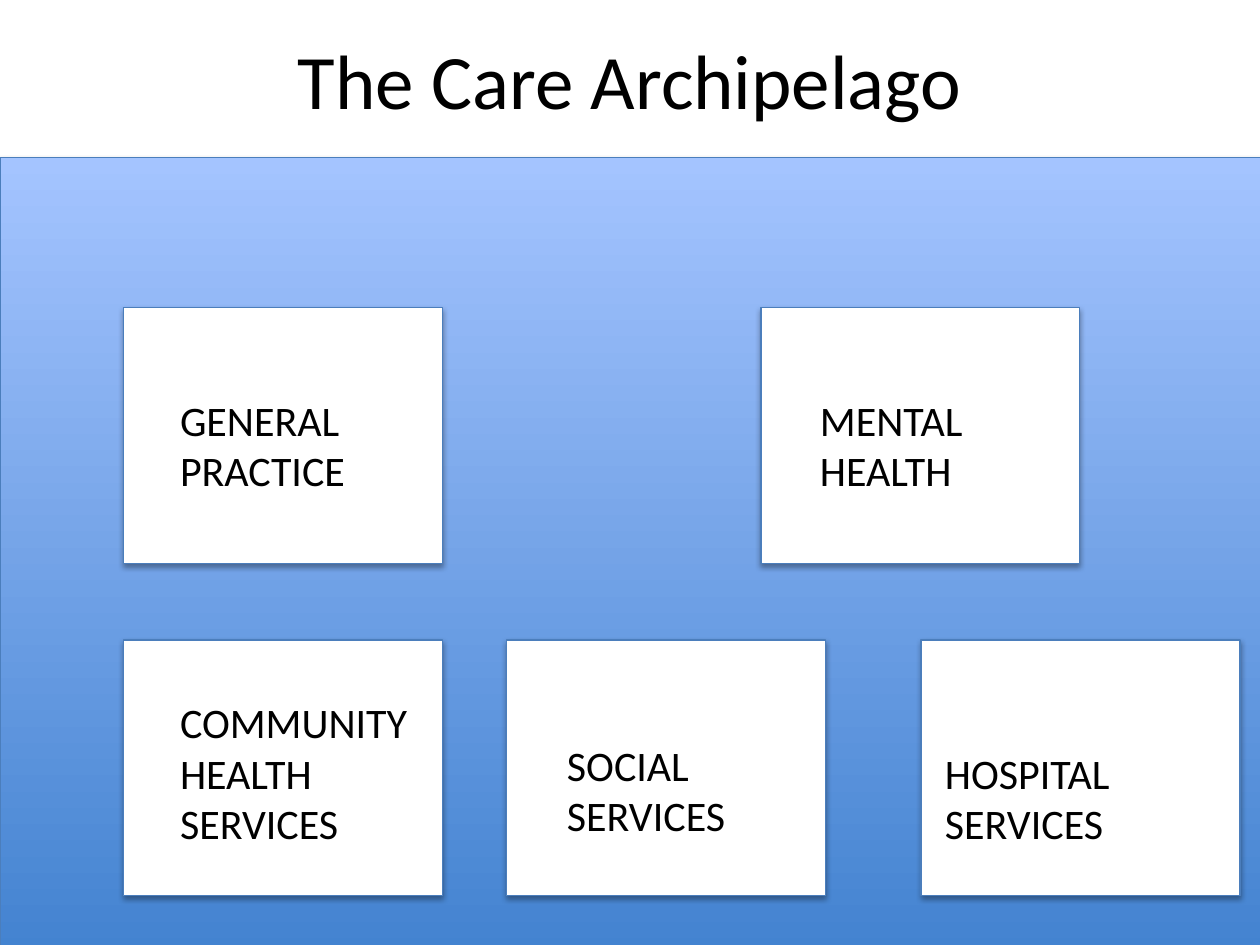
from dataclasses import dataclass

from lxml.etree import SubElement
from pptx import Presentation
from pptx.dml.color import RGBColor
from pptx.enum.shapes import MSO_SHAPE
from pptx.enum.text import MSO_ANCHOR, PP_ALIGN
from pptx.oxml.ns import qn
from pptx.shapes.autoshape import Shape
from pptx.slide import Slide
from pptx.util import Cm, Pt

HUES = {"ink": "000000", "white": "FFFFFF", "edge": "4B7EBC",
        "deep": "3F80CE", "pale": "A4C4FF"}
WIDE, HIGH = 6.43, 5.16
TOP, LOW = 6.2, 12.9


@dataclass
class Isle:
    lines: list[str]
    left: float
    top: float
    text_x: float
    text_y: float


ISLES = [
    Isle(["GENERAL", "PRACTICE"], 2.49, TOP, 3.38, 7.82),
    Isle(["MENTAL", "HEALTH"], 15.34, TOP, 16.28, 7.82),
    Isle(["COMMUNITY", "HEALTH", "SERVICES"], 2.49, LOW, 3.38, 13.92),
    Isle(["HOSPITAL", "SERVICES"], 18.57, LOW, 18.8, 14.94),
    Isle(["SOCIAL", "SERVICES"], 10.21, LOW, 11.18, 14.78),
]


def hue(name: str) -> RGBColor:
    return RGBColor.from_string(HUES[name])


def add_shade(shape: Shape) -> None:
    shape.shadow.inherit = False
    group = shape._element.spPr.find(qn("a:effectLst"))
    shade = SubElement(group, qn("a:outerShdw"), blurRad=str(Pt(3.1)),
                       dist=str(Pt(1.8)), dir="5400000", rotWithShape="0")
    tone = SubElement(shade, qn("a:srgbClr"), val=HUES["ink"])
    SubElement(tone, qn("a:alpha"), val="35000")


def add_box(slide: Slide, left: float, top: float,
            wide: float, high: float) -> Shape:
    box = slide.shapes.add_shape(MSO_SHAPE.RECTANGLE, Cm(left), Cm(top),
                                 Cm(wide), Cm(high))
    box.fill.solid()
    box.fill.fore_color.rgb = hue("white")
    box.line.color.rgb = hue("edge")
    box.line.width = Pt(0.75)
    add_shade(box)
    return box


def add_sea(slide: Slide) -> None:
    sea = add_box(slide, 0, 3.18, 26.16, 16.71)
    sea.fill.gradient()
    sea.fill.gradient_angle = 90
    for stop, name, place in zip(sea.fill.gradient_stops,
                                 ("deep", "pale"), (0, 1)):
        stop.color.rgb = hue(name)
        stop.position = place


def add_text(slide: Slide, lines: list[str], left: float, top: float,
             wide: float, high: float, size: int,
             align: PP_ALIGN = PP_ALIGN.LEFT,
             anchor: MSO_ANCHOR = MSO_ANCHOR.TOP) -> None:
    box = slide.shapes.add_textbox(Cm(left), Cm(top), Cm(wide), Cm(high))
    frame = box.text_frame
    frame.word_wrap = True
    frame.vertical_anchor = anchor
    frame.text = "\n".join(lines)
    for para in frame.paragraphs:
        para.alignment = align
        para.font.name = "Calibri"
        para.font.size = Pt(size)
        para.font.color.rgb = hue("ink")


def main() -> None:
    deck = Presentation()
    deck.slide_width, deck.slide_height = Cm(25.4), Cm(19.05)
    slide = deck.slides.add_slide(deck.slide_layouts[6])
    add_text(slide, ["The Care Archipelago"], 1.27, 0, 22.86, 3.18, 44,
             PP_ALIGN.CENTER, MSO_ANCHOR.MIDDLE)
    add_sea(slide)
    for isle in ISLES:
        add_box(slide, isle.left, isle.top, WIDE, HIGH)
        add_text(slide, isle.lines, isle.text_x, isle.text_y,
                 5.4, 0.25 + 1.03 * len(isle.lines), 24)
    deck.save("out.pptx")


if __name__ == "__main__":
    main()
